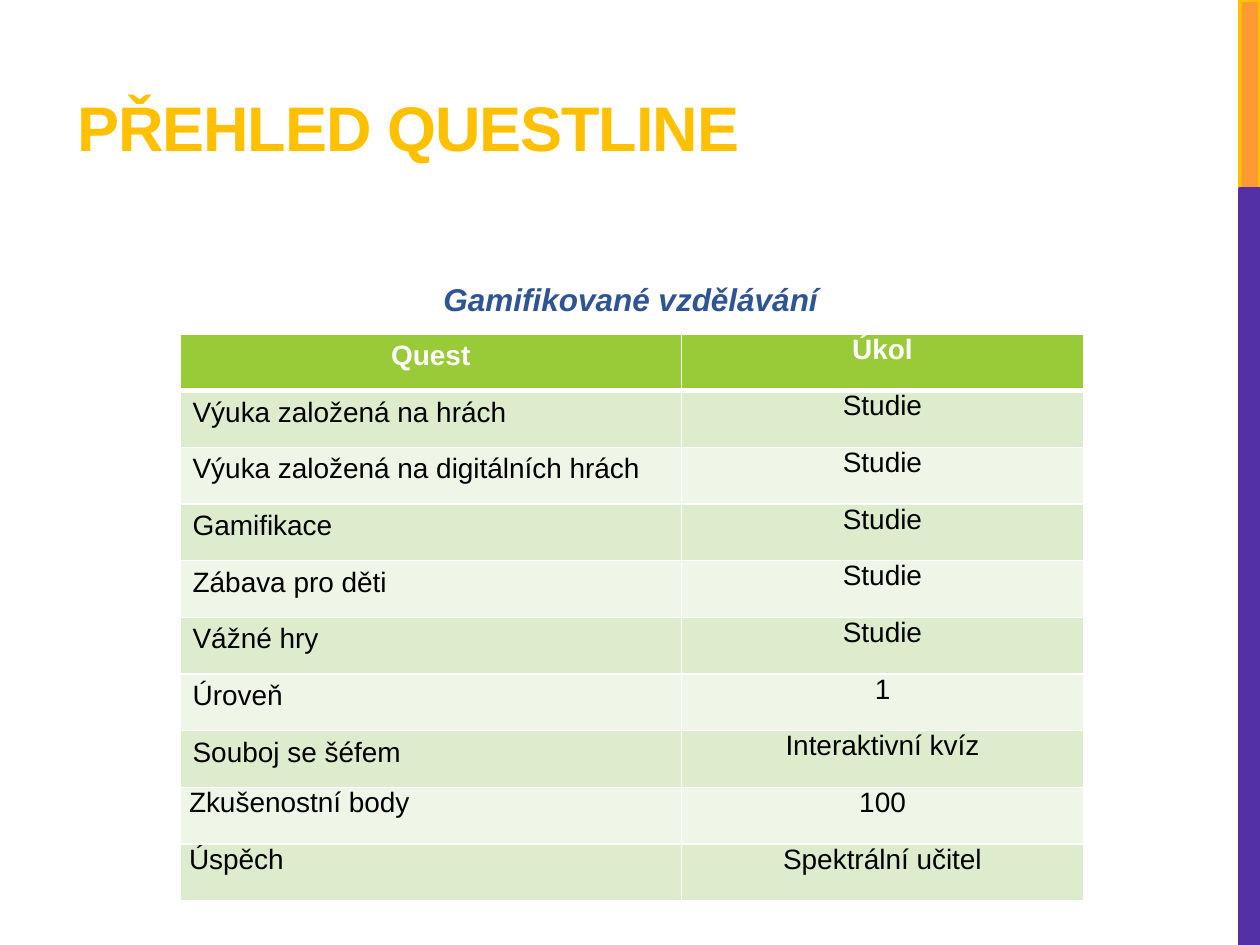
"""Build the questline overview slide with its table of quests and tasks."""
from dataclasses import dataclass

from lxml.etree import SubElement
from pptx import Presentation
from pptx.dml.color import RGBColor as Rgb
from pptx.enum.shapes import MSO_SHAPE as Preset
from pptx.enum.text import MSO_ANCHOR as Anchor, MSO_AUTO_SIZE as AutoSize, PP_ALIGN as Align
from pptx.oxml.ns import qn
from pptx.util import Cm, Pt


@dataclass(frozen=True)
class Theme:
    font: str = "Arial"
    gold: str = "FFC000"
    orange: str = "FF9933"
    purple: str = "5330A5"
    blue: str = "2F5496"
    header: str = "99CB38"
    bands: tuple = ("DEECCE", "EFF6E8")
    white: str = "FFFFFF"
    black: str = "000000"
    title_size: int = 36
    caption_size: int = 18
    table_size: int = 16


theme = Theme()


def style(paragraph, size, color, bold, align, italic=False):
    paragraph.alignment = align
    font = paragraph.font
    font.name, font.size, font.bold, font.italic = theme.font, Pt(size), bold, italic
    font.color.rgb = Rgb.from_string(color)


def add_border(cell, side, width):
    line = SubElement(cell._tc.get_or_add_tcPr(), qn(f"a:{side}"), w=str(Pt(width)))
    fill = SubElement(line, qn("a:solidFill"))
    SubElement(fill, qn("a:srgbClr"), val=theme.white)


prs = Presentation()
prs.slide_width, prs.slide_height = Cm(25.4), Cm(19.05)
slide = prs.slides.add_slide(prs.slide_layouts[5])

side_bars = [(0, 3.81, theme.orange, theme.gold), (3.81, 15.24, theme.purple, theme.purple)]
for top, height, fill_color, line_color in side_bars:
    bar = slide.shapes.add_shape(Preset.RECTANGLE, Cm(25), Cm(top), Cm(0.4), Cm(height))
    bar.shadow.inherit = False
    bar.fill.solid()
    bar.fill.fore_color.rgb = Rgb.from_string(fill_color)
    bar.line.color.rgb = Rgb.from_string(line_color)
    bar.line.width = Pt(2.25)

title = slide.shapes.title
title.left, title.top, title.width, title.height = Cm(1.3), Cm(1.32), Cm(16.08), Cm(2.11)
title.text_frame.text = "PŘEHLED QUESTLINE"
title.text_frame.vertical_anchor = Anchor.BOTTOM
heading = title.text_frame.paragraphs[0]
style(heading, theme.title_size, theme.gold, True, Align.LEFT)
heading.runs[0].font._element.set("spc", "-60")

quests = [
    ("Quest", "Úkol"),
    ("Výuka založená na hrách", "Studie"),
    ("Výuka založená na digitálních hrách", "Studie"),
    ("Gamifikace", "Studie"),
    ("Zábava pro děti", "Studie"),
    ("Vážné hry", "Studie"),
    ("Úroveň", "1"),
    ("Souboj se šéfem", "Interaktivní kvíz"),
    ("Zkušenostní body", "100"),
    ("Úspěch", "Spektrální učitel"),
]
first_tight_row = 8
row_height = Cm(1.143)
quest_table = slide.shapes.add_table(
    len(quests), 2, Cm(3.63), Cm(6.73), Cm(18.21), row_height * len(quests)
).table
for column, width in zip(quest_table.columns, (10.11, 8.1)):
    column.width = Cm(width)

for row, texts in enumerate(quests):
    quest_table.rows[row].height = row_height
    is_header = row == 0
    for col, text in enumerate(texts):
        cell = quest_table.cell(row, col)
        cell.text = text
        if col == 1 or row >= first_tight_row:
            cell.margin_left = cell.margin_right = Cm(0.18)
            cell.margin_top = cell.margin_bottom = 0
        add_border(cell, "lnL", 1)
        add_border(cell, "lnR", 1)
        add_border(cell, "lnT", 3 if row == 1 else 1)
        add_border(cell, "lnB", 3 if is_header else 1)
        cell.fill.solid()
        band = theme.header if is_header else theme.bands[(row - 1) % 2]
        cell.fill.fore_color.rgb = Rgb.from_string(band)
        style(
            cell.text_frame.paragraphs[0],
            theme.table_size,
            theme.white if is_header else theme.black,
            is_header,
            Align.CENTER if is_header or col == 1 else Align.LEFT,
        )

caption = slide.shapes.add_textbox(Cm(3.61), Cm(5.13), Cm(18.21), Cm(1.3)).text_frame
caption.word_wrap = True
caption.auto_size = AutoSize.SHAPE_TO_FIT_TEXT
caption.text = "Gamifikované vzdělávání"
subject = caption.paragraphs[0]
subject.line_spacing = 1.5
subject.space_after = Pt(6)
style(subject, theme.caption_size, theme.blue, True, Align.CENTER, italic=True)

prs.save("out.pptx")
